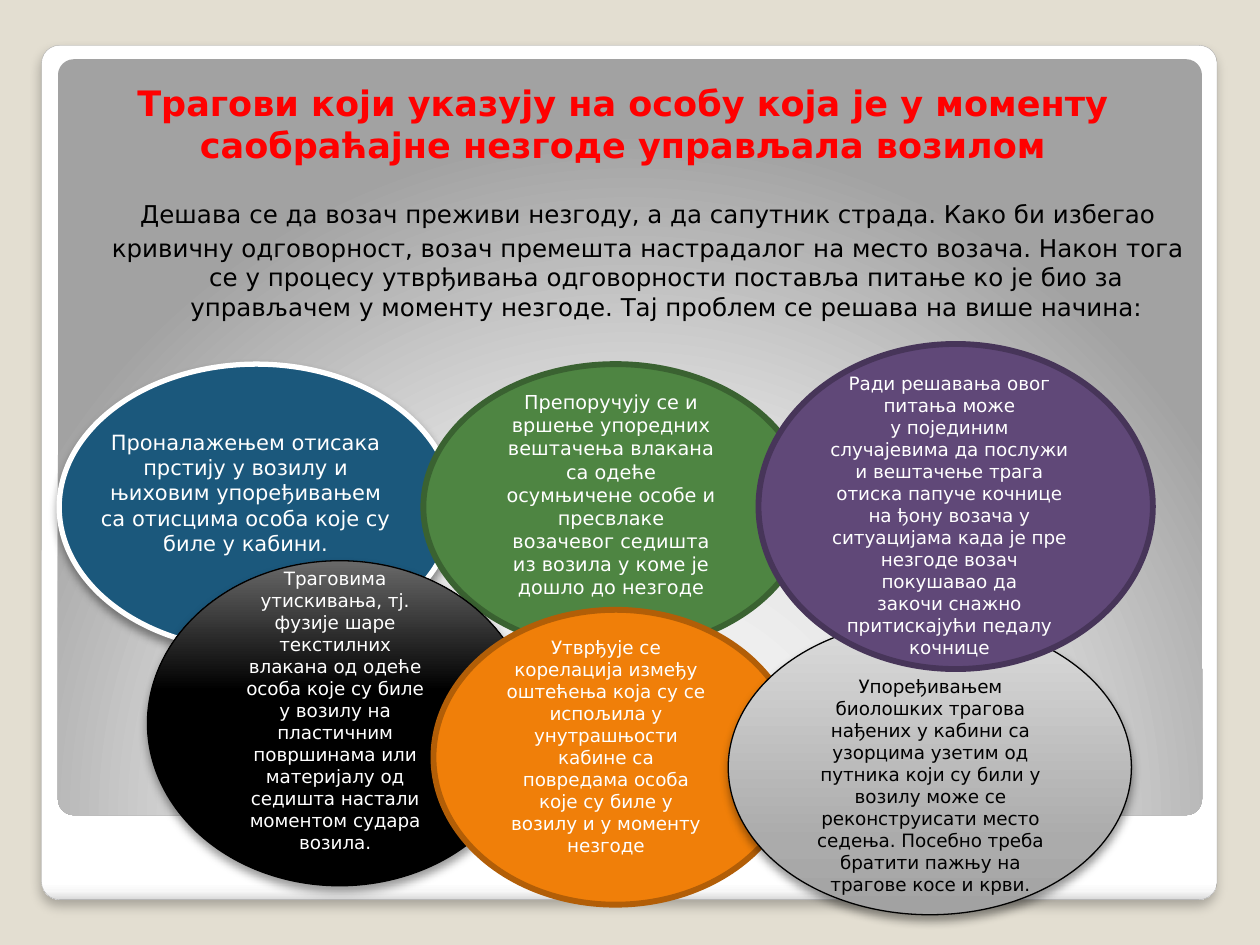
from lxml import etree
from pptx import Presentation
from pptx.dml.color import RGBColor
from pptx.enum.shapes import MSO_SHAPE
from pptx.enum.text import MSO_ANCHOR, PP_ALIGN
from pptx.oxml.ns import qn
from pptx.util import Inches, Pt

ELLIPSE, ROUNDED = MSO_SHAPE.OVAL, MSO_SHAPE.ROUNDED_RECTANGLE
CENTER = PP_ALIGN.CENTER
TOP, MIDDLE = MSO_ANCHOR.TOP, MSO_ANCHOR.MIDDLE
FONT = "DejaVu Sans"

COLORS = {
    "background": "E3DED1", "frame_line": "A4A4A4",
    "white": "FFFFFF", "black": "000000", "red": "FF0000",
    "blue": "1B587C", "green": "4E8542", "green_line": "3A6231",
    "orange": "F07F09", "orange_line": "B25E07",
    "purple": "604878", "purple_line": "473559",
}

# Gradient stops: (position in percent, colour)
FRAME_STOPS = [(0, "FFFFFF"), (98, "FFFFFF"), (99, "F7F7F7"), (100, "DADADA")]
PANEL_STOPS = [(0, "FFFFFF"), (55, "E1E1E1"), (100, "A2A2A2")]
BLACK_STOPS = [(0, "000000"), (60, "000000"), (100, "696969")]
GRAY_STOPS = [(0, "A2A2A2"), (25, "ABABAB"), (100, "DCDCDC")]

# Shadows: opacity in percent, blur and distance in points
FRAME_SHADOW = (25, 6, 4)
ELLIPSE_SHADOW = (40, 5.2, 3)

TITLE = "Трагови који указују на особу која је у моменту саобраћајне незгоде управљала возилом"
INTRO = [
    "Дешава се да возач преживи незгоду, а да сапутник страда. Како би избегао",
    "кривичну одговорност, возач премешта настрадалог на место возача. Након тога се у процесу "
    "утврђивања одговорности поставља питање ко је био за управљачем у моменту незгоде. "
    "Тај проблем се решава на више начина:",
]
# Ellipses from back to front: box, fill, line colour, line width, shadow
ELLIPSES = [
    ((0.47, 2.89, 3.13, 2.27), "blue", "white", 3, ELLIPSE_SHADOW),
    ((3.36, 2.89, 3.05, 2.27), "green", "green_line", 3.35, None),
    ((1.17, 4.45, 3.05, 2.58), BLACK_STOPS, "black", 0.75, ELLIPSE_SHADOW),
    ((3.44, 4.84, 2.89, 2.34), "orange", "orange_line", 3.35, None),
    ((5.78, 4.92, 3.2, 2.34), GRAY_STOPS, "black", 0.75, ELLIPSE_SHADOW),
    ((6.02, 2.73, 3.13, 2.58), "purple", "purple_line", 3.35, None),
]
# Ellipse texts: box, paragraphs, format
METHODS = [
    ((0.7, 3.36, 2.5, 1.11),
     ["Проналажењем отисака прстију у возилу и њиховим упоређивањем са отисцима особа "
      "које су биле у кабини."], {"size": 12}),
    ((3.91, 3.05, 1.88, 1.77),
     ["Препоручују се и вршење упоредних вештачења влакана са одеће осумњичене особе и "
      "пресвлаке возачевог седишта из возила у коме је дошло до незгоде"], {"size": 11}),
    ((1.8, 4.45, 1.72, 2.7),
     ["Траговима утискивања, тј. фузије шаре текстилних влакана од одеће особа које су биле "
      "у возилу на пластичним површинама или материјалу од седишта настали моментом судара "
      "возила."], {}),
    ((6.48, 2.89, 2.11, 2.4),
     ["Ради решавања овог питања може",
      "у појединим случајевима да послужи",
      "и вештачење трага отиска папуче кочнице",
      "на ђону возача у ситуацијама када је пре незгоде возач покушавао да",
      "закочи снажно притискајући педалу кочнице"], {"anchor": MIDDLE}),
    ((3.91, 5, 1.8, 1.87),
     ["Утврђује се корелација између оштећења која су се испољила у унутрашњости кабине са "
      "повредама особа које су биле у возилу и у моменту незгоде"], {}),
    ((6.33, 5.31, 2.11, 1.87),
     ["Упоређивањем биолошких трагова нађених у кабини са узорцима узетим од путника који су "
      "били у возилу може се реконструисати место седења. Посебно треба братити пажњу на "
      "трагове косе и крви."], {"color": "black"}),
]


def rgb(name):
    return RGBColor.from_string(COLORS[name])


def add_node(parent, tag, **attrs):
    return etree.SubElement(parent, qn(tag), {k: str(v) for k, v in attrs.items()})


def set_gradient(sp, stops, angle, focus):
    """Fill with any number of stops, linear or circular around a focus."""
    sp.fill.gradient()
    grad = sp._element.spPr.find(qn("a:gradFill"))
    for child in list(grad):
        grad.remove(child)
    stop_list = add_node(grad, "a:gsLst")
    for position, color in stops:
        stop = add_node(stop_list, "a:gs", pos=position * 1000)
        add_node(stop, "a:srgbClr", val=color)
    if focus:
        circle = add_node(grad, "a:path", path="circle")
        add_node(circle, "a:fillToRect", **{k: v * 1000 for k, v in zip("ltrb", focus)})
    else:
        add_node(grad, "a:lin", ang=angle * 60000, scaled=0)


def set_shadow(sp, opacity, blur, distance):
    effects = sp._element.spPr.find(qn("a:effectLst"))
    shadow = add_node(effects, "a:outerShdw", blurRad=Pt(blur), dist=Pt(distance),
                      dir=90 * 60000, algn="ctr", rotWithShape=0)
    color = add_node(shadow, "a:srgbClr", val=COLORS["black"])
    add_node(color, "a:alpha", val=opacity * 1000)


def add_figure(slide, kind, box, fill, line=None, width=0, shadow=None, angle=270, focus=None):
    sp = slide.shapes.add_shape(kind, *map(Inches, box))
    sp.shadow.inherit = False
    if isinstance(fill, str):
        sp.fill.solid()
        sp.fill.fore_color.rgb = rgb(fill)
    else:
        set_gradient(sp, fill, angle, focus)
    if line:
        sp.line.color.rgb = rgb(line)
        sp.line.width = Pt(width)
    else:
        sp.line.fill.background()
    if shadow:
        set_shadow(sp, *shadow)
    if kind == ROUNDED:
        sp.adjustments[0] = 0.021
    return sp


def add_text(slide, box, paragraphs, size=10.5, color="white", bold=False, anchor=TOP,
             left=0.1, top=0.05, hanging=0, before=0):
    tf = slide.shapes.add_textbox(*map(Inches, box)).text_frame
    tf.word_wrap = True
    tf.vertical_anchor = anchor
    tf.margin_left, tf.margin_top = Inches(left), Inches(top)
    for i, text in enumerate(paragraphs):
        p = tf.paragraphs[0] if i == 0 else tf.add_paragraph()
        p.alignment = CENTER
        p.space_before = Pt(before)
        if hanging:
            pPr = p._p.get_or_add_pPr()
            pPr.set("marL", str(Inches(hanging)))
            pPr.set("indent", str(-Inches(hanging)))
        r = p.add_run()
        r.text = text
        r.font.name, r.font.size, r.font.bold = FONT, Pt(size), bold
        r.font.color.rgb = rgb(color)


def main():
    prs = Presentation()
    prs.slide_width, prs.slide_height = Inches(10), Inches(7.5)
    slide = prs.slides.add_slide(prs.slide_layouts[6])
    slide.background.fill.solid()
    slide.background.fill.fore_color.rgb = rgb("background")

    # Frame and inner panel
    add_figure(slide, ROUNDED, (0.33, 0.36, 9.33, 6.78), FRAME_STOPS, "frame_line", 0.16,
               FRAME_SHADOW, angle=90)
    add_figure(slide, ROUNDED, (0.46, 0.47, 9.08, 6), PANEL_STOPS, focus=(50, 175, 50, -75))

    # Title and introduction
    add_text(slide, (0.47, 0.6, 8.95, 0.8), [TITLE], size=20, color="red", bold=True)
    add_text(slide, (0.62, 1.48, 8.95, 1.2), INTRO, size=14, color="black",
             left=0.2, top=0.1, hanging=0.29, before=2.5)

    # Overlapping ellipses with the methods
    for box, fill, line, width, shadow in ELLIPSES:
        add_figure(slide, ELLIPSE, box, fill, line, width, shadow)
    for box, paragraphs, style in METHODS:
        add_text(slide, box, paragraphs, **style)

    prs.save("out.pptx")


if __name__ == "__main__":
    main()
